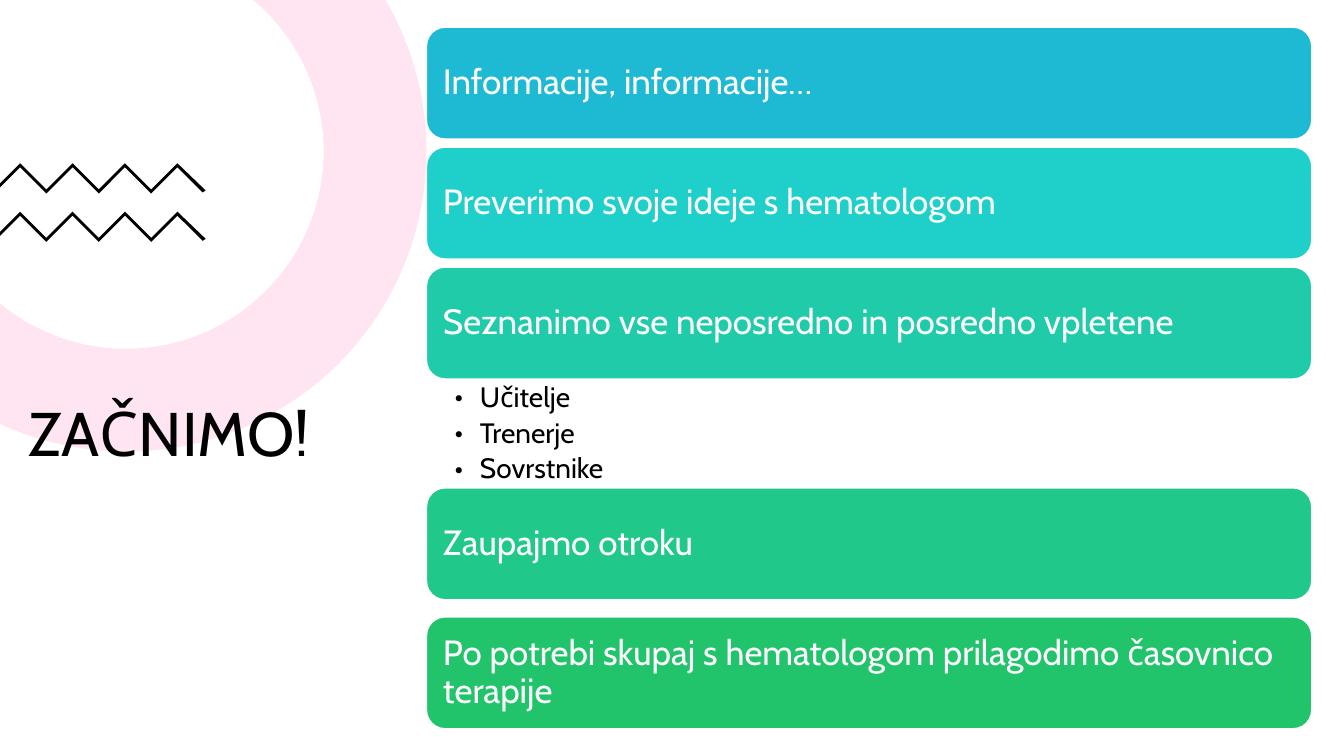
import math
from dataclasses import dataclass

from lxml import etree
from pptx import Presentation
from pptx import util as u
from pptx.dml.color import RGBColor
from pptx.enum import shapes, text
from pptx.oxml import ns


@dataclass(frozen=True)
class Theme:
    font: str = "Cabin"
    black: str = "000000"
    white: str = "FFFFFF"
    pink: str = "FF80BD"
    pink_alpha: int = 20
    bars: tuple = ("1EB9D3", "1FCFCA", "20CBA9", "20C889", "21C46B")
    title_size: int = 44
    bar_size: int = 25
    bullet_size: int = 20


THEME = Theme()
BAR_HEIGHT = 1.11
BARS = [
    (0.27, "Informacije, informacije…"),
    (1.46, "Preverimo svoje ideje s hematologom"),
    (2.65, "Seznanimo vse neposredno in posredno vpletene"),
    (4.84, "Zaupajmo otroku"),
    (6.12, "Po potrebi skupaj s hematologom prilagodimo časovnico terapije"),
]
AUDIENCE = ["Učitelje", "Trenerje", "Sovrstnike"]


def write(sp, lines, size, color, insets=(0.11, 0.1, 0.1, 0.1),
          anchor=text.MSO_ANCHOR.MIDDLE, space_after=0, bullet=None):
    tf = sp.text_frame
    tf.word_wrap = True
    tf.vertical_anchor = anchor
    tf.margin_left, tf.margin_top, tf.margin_right, tf.margin_bottom = map(u.Inches, insets)
    for i, line in enumerate(lines):
        p = tf.paragraphs[0] if i == 0 else tf.add_paragraph()
        p.alignment = text.PP_ALIGN.LEFT
        p.line_spacing = 0.9
        p.space_after = u.Pt(space_after)
        if bullet:
            pPr = p._p.get_or_add_pPr()
            pPr.set("marL", str(u.Inches(0.25)))
            pPr.set("indent", str(-u.Inches(0.25)))
            etree.SubElement(pPr, ns.qn("a:buFont")).set("typeface", THEME.font)
            etree.SubElement(pPr, ns.qn("a:buChar")).set("char", bullet)
        r = p.add_run()
        r.text = line
        r.font.name = THEME.font
        r.font.size = u.Pt(size)
        r.font.color.rgb = RGBColor.from_string(color)


def paint(sp, color, line=None, alpha=None):
    sp.shadow.inherit = False
    sp.fill.solid()
    sp.fill.fore_color.rgb = RGBColor.from_string(color)
    if alpha:
        clr = sp.fill._xPr.find(".//" + ns.qn("a:srgbClr"))
        etree.SubElement(clr, ns.qn("a:alpha")).set("val", str(alpha * 1000))
    if line:
        sp.line.color.rgb = RGBColor.from_string(line)
        sp.line.width = u.Pt(1)
    else:
        sp.line.fill.background()


def add_outline(s, start, segments, color, alpha=None):
    """Draw a closed outline; a segment is one point (line) or three (cubic curve)."""
    points = [(u.Inches(x), u.Inches(y)) for seg in segments for x, y in seg]
    builder = s.shapes.build_freeform(*map(u.Inches, start))
    builder.add_line_segments(points, close=True)
    sp = builder.convert_to_shape()
    lines = iter(list(sp._element.iter(ns.qn("a:lnTo"))))
    for seg in segments:
        parts = [next(lines) for _ in seg]
        if len(seg) == 3:
            curve = etree.Element(ns.qn("a:cubicBezTo"))
            parts[0].addprevious(curve)
            for part in parts:
                curve.append(part[0])
                part.getparent().remove(part)
    paint(sp, color, alpha=alpha)


def arc(cx, cy, radius, angles):
    """Return the start and the cubic segments of an arc through the angles."""
    def at(a, tangent=0):
        return (cx + radius * (math.cos(a) - tangent * math.sin(a)),
                cy + radius * (math.sin(a) + tangent * math.cos(a)))

    segments = []
    for a, b in zip(angles, angles[1:]):
        k = 4 / 3 * math.tan((b - a) / 4)
        segments.append([at(a, k), at(b, -k), at(b)])
    return at(angles[0]), segments


def add_ring(s, cx, cy, outer, inner):
    """Draw the part of a ring that lies right of and below the slide corner."""
    def angles(radius):
        return [math.asin(-cy / radius), 0, math.pi / 2, math.acos(-cx / radius)]

    start, outside = arc(cx, cy, outer, angles(outer))
    turn, inside = arc(cx, cy, inner, angles(inner)[::-1])
    add_outline(s, start, outside + [[turn]] + inside, THEME.pink, THEME.pink_alpha)


def add_zigzag(s, top, first_peak=0.2, step=0.26, thickness=0.04):
    turns = [(first_peak + step * i, top + step * (i % 2)) for i in range(7)]
    upper = turns + [(2.04, top + 0.27)]
    lower = [(0, top + 0.24)] + [(x, y + thickness) for x, y in turns] + [(2.01, top + 0.29)]
    add_outline(s, (0, top + 0.2), [[point] for point in upper + lower[::-1]], THEME.black)


def add_text_box(s, left, top, width, height, lines, **fmt):
    sp = s.shapes.add_textbox(*map(u.Inches, (left, top, width, height)))
    write(sp, lines, **fmt)


def add_title_region(s, left, top, width, height):
    add_ring(s, 1.25, 1.5, outer=2.98, inner=1.96)
    add_text_box(s, left, top, width, height, ["ZAČNIMO!"], size=THEME.title_size,
                 color=THEME.black, insets=(0.1, 0.05, 0.1, 0.05))
    for zigzag_top in (1.62, 2.1):
        add_zigzag(s, zigzag_top)


def add_steps_region(s, left, width):
    for (top, label), color in zip(BARS, THEME.bars):
        sp = s.shapes.add_shape(shapes.MSO_SHAPE.ROUNDED_RECTANGLE,
                                *map(u.Inches, (left, top, width, BAR_HEIGHT)))
        paint(sp, color, line=THEME.white)
        write(sp, [label], THEME.bar_size, THEME.white)
    add_text_box(s, left, BARS[2][0] + BAR_HEIGHT + 0.01, width, 1.16, AUDIENCE,
                 size=THEME.bullet_size, color=THEME.black,
                 insets=(0.28, 0.03, 0.19, 0.03), anchor=text.MSO_ANCHOR.TOP,
                 space_after=4, bullet="•")


def main():
    prs = Presentation()
    prs.slide_width, prs.slide_height = u.Inches(13.33), u.Inches(7.5)
    s = prs.slides.add_slide(prs.slide_layouts[6])
    add_title_region(s, 0.18, 1.92, 4.23, 4.83)
    add_steps_region(s, 4.23, 8.78)
    prs.save("out.pptx")


if __name__ == "__main__":
    main()
